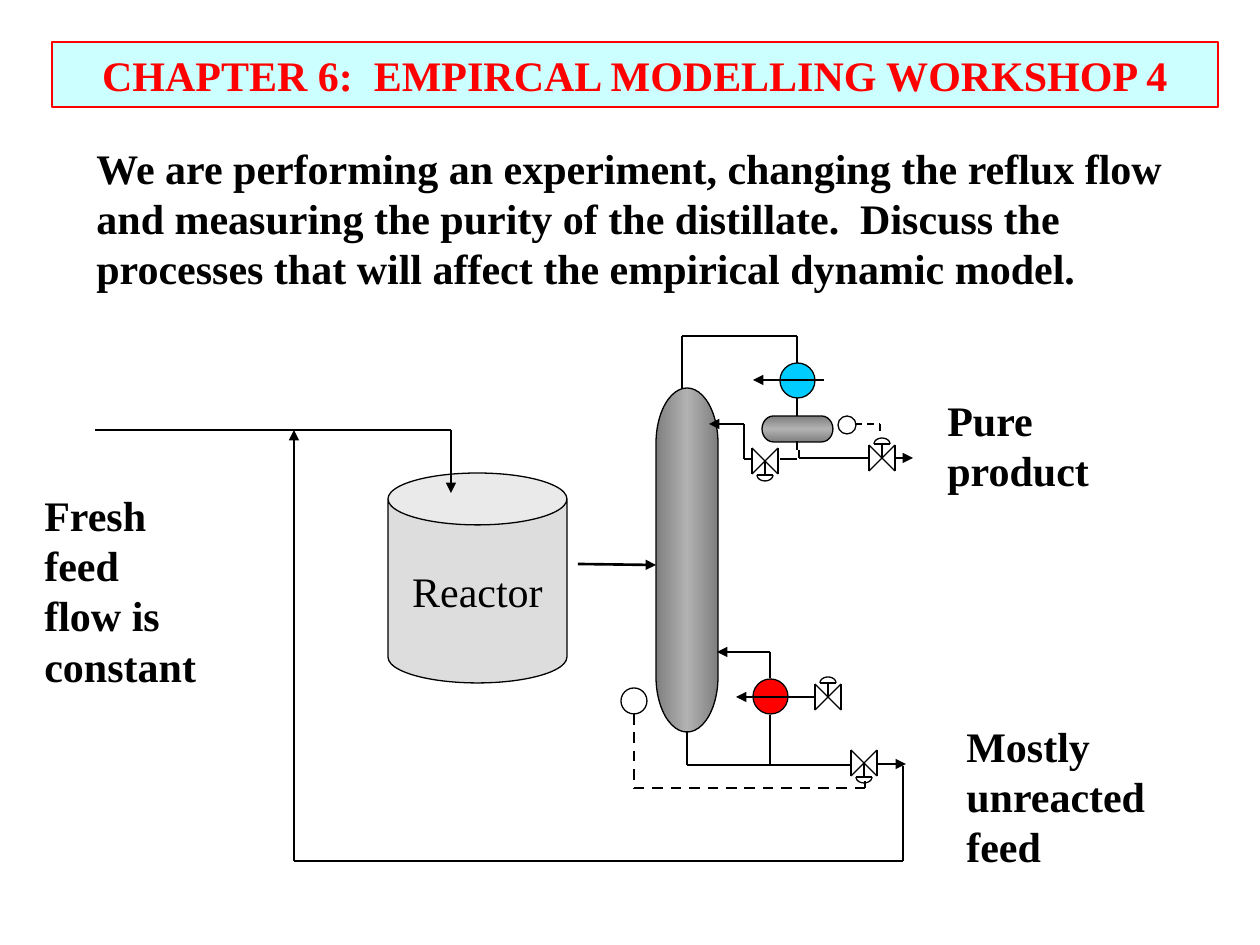
import math

import pptx
import pptx.dml.color
import pptx.enum.dml
import pptx.enum.shapes
import pptx.enum.text
import pptx.oxml
import pptx.oxml.ns
import pptx.util
from lxml import etree

EMU_PER_PX = 914400 / 126
FONT = "Times New Roman"
BLACK, RED = "000000", "FF0000"
THIN, MEDIUM, THICK = 0.75, 1, 1.5
SHAPES = pptx.enum.shapes.MSO_SHAPE
ALIGN = pptx.enum.text.PP_ALIGN

# text, left, top, width, height
LABELS = [
    ("We are performing an experiment, changing the reflux flow and measuring the purity "
     "of the distillate.  Discuss the processes that will affect the empirical dynamic model.",
     84, 136, 1092, 164),
    ("Fresh feed flow is constant", 32, 483, 179, 214),
    ("Mostly unreacted feed", 954, 714, 242, 164),
    ("Pure product", 935, 388, 242, 113),
]

# left, top, diameter, fill
CIRCLES = [
    (753, 679, 35, RED),
    (780, 363, 35, "00CCFF"),
    (838, 416, 18, None),
    (621, 688, 26, None),
]

# points, line width, ends in an arrow, dashed
PIPES = [
    ([(578, 564), (656, 565)], THICK, True, False),
    # overhead vapour, condenser and drum
    ([(797, 363), (797, 336), (682, 336), (682, 389)], THIN, False, False),
    ([(824, 380), (753, 380)], THIN, True, False),
    ([(797, 398), (797, 416)], THIN, False, False),
    ([(797, 441), (797, 450)], THICK, False, False),
    # distillate
    ([(799, 450), (799, 458)], THIN, False, False),
    ([(799, 458), (870, 458)], THICK, False, False),
    ([(896, 458), (913, 458)], THIN, True, False),
    ([(855, 424), (880, 424), (880, 436)], MEDIUM, False, True),
    # reflux
    ([(797, 459), (780, 459)], THICK, False, False),
    ([(753, 459), (744, 459)], THIN, False, False),
    ([(744, 459), (744, 424), (709, 424)], THICK, True, False),
    # bottoms and reboiler
    ([(687, 731), (687, 765), (852, 765)], THICK, False, False),
    ([(770, 715), (770, 765)], THICK, False, False),
    ([(770, 678), (770, 652), (717, 652)], THICK, True, False),
    ([(815, 697), (736, 697)], THICK, True, False),
    ([(877, 764), (906, 764)], THICK, True, False),
    ([(634, 714), (634, 788), (865, 788)], THICK, False, True),
    ([(865, 788), (865, 781)], THIN, False, False),
    # fresh feed and recycle
    ([(95, 430), (451, 430), (451, 493)], THIN, True, False),
    ([(903, 766), (903, 861), (294, 861), (294, 430)], THIN, True, False),
]

# centre x, centre y, actuator side (-1 above, 1 below)
VALVES = [(882, 458, -1), (765, 461, 1), (864, 763, 1), (828, 697, -1)]


def px(length):
    return pptx.util.Emu(round(length * EMU_PER_PX))


def color(hex_string):
    return pptx.dml.color.RGBColor.from_string(hex_string)


def set_line(line, width=THIN, hex_string=BLACK):
    line.color.rgb = color(hex_string)
    line.width = pptx.util.Pt(width)


def set_fill(shape, hex_string):
    if hex_string is None:
        shape.fill.background()
    else:
        shape.fill.solid()
        shape.fill.fore_color.rgb = color(hex_string)


def write(shape, text, hex_string=BLACK, bold=True, alignment=ALIGN.LEFT):
    paragraph = shape.text_frame.paragraphs[0]
    paragraph.alignment = alignment
    run = paragraph.add_run()
    run.text = text
    run.font.name = FONT
    run.font.size = pptx.util.Pt(24)
    run.font.bold = bold
    run.font.color.rgb = color(hex_string)


def add_label(slide, text, left, top, width, height):
    box = slide.shapes.add_textbox(px(left), px(top), px(width), px(height))
    box.text_frame.word_wrap = True
    write(box, text)


def add_shape(slide, kind, left, top, width, height, fill=None):
    shape = slide.shapes.add_shape(kind, px(left), px(top), px(width), px(height))
    shape.shadow.inherit = False
    set_fill(shape, fill)
    set_line(shape.line)
    return shape


def add_vessel(slide, left, top, width, height, angle, rotation=0):
    """Add a round-ended metal vessel, shaded at an angle fixed to the slide."""
    vessel = add_shape(slide, SHAPES.FLOWCHART_TERMINATOR, left, top, width, height)
    vessel.rotation = rotation
    vessel.fill.gradient()
    properties = vessel._element.spPr
    stops = "".join(
        f'<a:gs pos="{position * 1000}"><a:srgbClr val="{shade}"/></a:gs>'
        for position, shade in [(0, "7F7F7F"), (50, "B2B2B2"), (100, "7F7F7F")])
    gradient = pptx.oxml.parse_xml(
        f'<a:gradFill {pptx.oxml.ns.nsdecls("a")} rotWithShape="0"><a:gsLst>{stops}</a:gsLst>'
        f'<a:lin ang="{angle * 60000}" scaled="0"/></a:gradFill>')
    properties.replace(properties.find(pptx.oxml.ns.qn("a:gradFill")), gradient)


def add_segment(slide, start, end, width=THIN, arrow=False, dashed=False):
    segment = slide.shapes.add_connector(
        pptx.enum.shapes.MSO_CONNECTOR.STRAIGHT, *map(px, (*start, *end)))
    set_line(segment.line, width)
    if dashed:
        segment.line.dash_style = pptx.enum.dml.MSO_LINE.DASH
    if arrow:
        line = segment.line._get_or_add_ln()
        etree.SubElement(line, pptx.oxml.ns.qn("a:tailEnd"), type="triangle")
    etree.SubElement(segment._element.spPr, pptx.oxml.ns.qn("a:effectLst"))


def add_pipe(slide, points, width, arrow, dashed):
    last = len(points) - 2
    for index, (start, end) in enumerate(zip(points, points[1:])):
        add_segment(slide, start, end, width, arrow and index == last, dashed)


def add_valve(slide, x, y, side):
    """Add a bow-tie valve with a domed actuator above or below it."""
    half, cap_half, dome_height = 13, 8, 6
    cap = y + side * 14
    for start, end in [
        ((x - half, y - half), (x - half, y + half)),
        ((x + half, y - half), (x + half, y + half)),
        ((x - half, y - half), (x + half, y + half)),
        ((x - half, y + half), (x + half, y - half)),
        ((x, y), (x, cap)),
        ((x - cap_half, cap), (x + cap_half, cap)),
    ]:
        add_segment(slide, start, end)
    angles = [math.pi * step / 12 for step in range(13)]
    arc = [(px(x + cap_half * math.cos(angle)),
            px(cap + side * dome_height * math.sin(angle))) for angle in angles]
    builder = slide.shapes.build_freeform(*arc[0])
    builder.add_line_segments(arc[1:], close=False)
    dome = builder.convert_to_shape()
    dome.shadow.inherit = False
    dome.fill.background()
    set_line(dome.line)


def add_reactor(slide):
    reactor = add_shape(slide, SHAPES.CAN, 388, 473, 179, 210, "DDDDDD")
    reactor.adjustments[0] = 0.29
    reactor.text_frame.word_wrap = False
    reactor.text_frame.vertical_anchor = pptx.enum.text.MSO_ANCHOR.MIDDLE
    write(reactor, "Reactor", bold=False, alignment=ALIGN.CENTER)


def set_title(slide):
    title = slide.shapes.title
    title.left, title.top, title.width, title.height = map(px, (52, 42, 1166, 65))
    set_fill(title, "CCFFFF")
    set_line(title.line, THIN, RED)
    title.text_frame.auto_size = pptx.enum.text.MSO_AUTO_SIZE.NONE
    title.text_frame.vertical_anchor = pptx.enum.text.MSO_ANCHOR.MIDDLE
    write(title, "CHAPTER 6:  EMPIRCAL MODELLING WORKSHOP 4", RED, alignment=ALIGN.CENTER)


def main():
    presentation = pptx.Presentation()
    presentation.slide_width, presentation.slide_height = px(1260), px(945)
    slide = presentation.slides.add_slide(presentation.slide_layouts[5])
    set_title(slide)
    for label in LABELS:
        add_label(slide, *label)
    add_reactor(slide)
    add_vessel(slide, 515, 529, 344, 62, angle=0, rotation=90)
    add_vessel(slide, 762, 416, 71, 26, angle=90)
    for left, top, diameter, fill in CIRCLES:
        add_shape(slide, SHAPES.OVAL, left, top, diameter, diameter, fill)
    for pipe in PIPES:
        add_pipe(slide, *pipe)
    for valve in VALVES:
        add_valve(slide, *valve)
    presentation.save("out.pptx")


if __name__ == "__main__":
    main()
